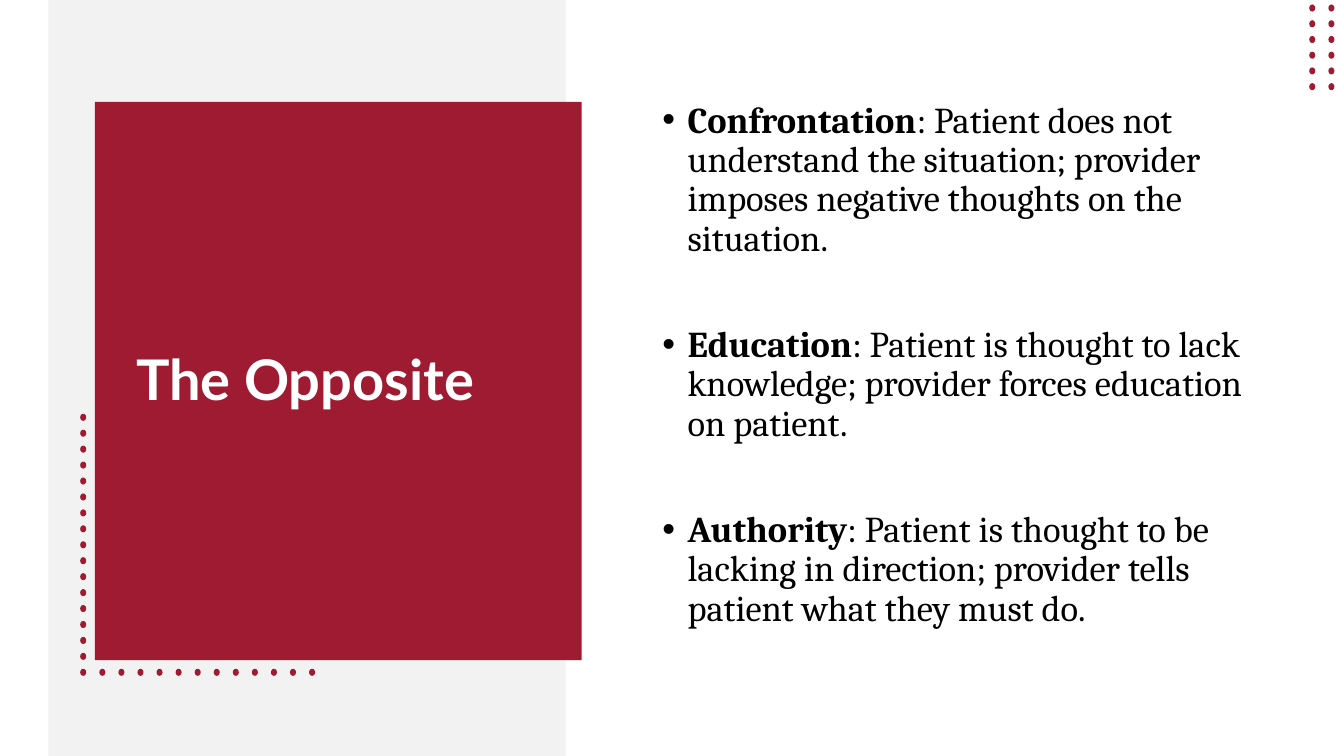
from dataclasses import dataclass

from pptx import Presentation
from pptx.dml.color import RGBColor
from pptx.enum.shapes import MSO_SHAPE
from pptx.enum.text import MSO_ANCHOR, MSO_AUTO_SIZE, PP_ALIGN
from pptx.util import Inches, Pt

RECT, OVAL = MSO_SHAPE.RECTANGLE, MSO_SHAPE.OVAL
TOP, MIDDLE = MSO_ANCHOR.TOP, MSO_ANCHOR.MIDDLE
LEFT = PP_ALIGN.LEFT
NO_FIT = MSO_AUTO_SIZE.NONE

COLORS = {"crimson": "9E1B32", "band": "F2F2F2", "white": "FFFFFF", "black": "000000"}
DOT_W, DOT_H = 0.07, 0.06


@dataclass
class Panel:
    x: float
    y: float
    w: float
    h: float
    color: str


@dataclass
class DotGrid:
    x: float
    y: float
    cols: int = 1
    rows: int = 1
    dx: float = 0
    dy: float = 0


@dataclass
class Point:
    term: str
    meaning: str


PANELS = [Panel(0.48, 0, 5.13, 7.5, "band"), Panel(0.94, 1.01, 4.83, 5.54, "crimson")]
FRAME_DOTS = [
    DotGrid(0.79, 4.11, rows=17, dy=2.53 / 16),
    DotGrid(0.98, 6.64, cols=12, dx=2.08 / 11),
]
CORNER_DOTS = [DotGrid(12.98, 0.05, cols=2, rows=6, dx=0.19, dy=0.156)]
POINTS = [
    Point("Confrontation", ": Patient does not understand the situation; "
          "provider imposes negative thoughts on the situation."),
    Point("Education", ": Patient is thought to lack knowledge; "
          "provider forces education on patient."),
    Point("Authority", ": Patient is thought to be lacking in direction; "
          "provider tells patient what they must do."),
]


def add_filled(shapes, kind, x: float, y: float, w: float, h: float, color: str):
    s = shapes.add_shape(kind, Inches(x), Inches(y), Inches(w), Inches(h))
    s.shadow.inherit = False
    s.fill.solid()
    s.fill.fore_color.rgb = RGBColor.from_string(COLORS[color])
    s.line.fill.background()
    return s


def add_dots(slide, grids: list[DotGrid]) -> None:
    group = slide.shapes.add_group_shape()
    for g in grids:
        for row in range(g.rows):
            for col in range(g.cols):
                dot = add_filled(group.shapes, OVAL, g.x + col * g.dx, g.y + row * g.dy,
                                 DOT_W, DOT_H, "crimson")
                dot.rotation = 90


def add_run(p, text: str, *, font: str, size: float, color: str, bold: bool = False) -> None:
    r = p.add_run()
    r.text = text
    r.font.name = font
    r.font.size = Pt(size)
    r.font.bold = bold
    r.font.color.rgb = RGBColor.from_string(COLORS[color])


def place(slide, s, x: float, y: float, w: float, h: float, anchor):
    """Move a placeholder above the panels and return its text frame."""
    s.left, s.top, s.width, s.height = Inches(x), Inches(y), Inches(w), Inches(h)
    slide.shapes.element.append(s.element)
    tf = s.text_frame
    tf.word_wrap = True
    tf.auto_size = NO_FIT
    tf.vertical_anchor = anchor
    return tf


def fill_title(slide) -> None:
    tf = place(slide, slide.shapes.title, 1.25, 1.45, 4.14, 4.68, MIDDLE)
    p = tf.paragraphs[0]
    p.alignment = LEFT
    p.line_spacing = 0.9
    add_run(p, "The Opposite", font="Lato", size=40, color="white", bold=True)


def fill_body(slide) -> None:
    tf = place(slide, slide.placeholders[1], 6.47, 1.01, 6.14, 6.1, TOP)
    tf.margin_top = 0
    for i, point in enumerate(POINTS):
        p = tf.add_paragraph() if i else tf.paragraphs[0]
        p.line_spacing = 0.9
        p.space_before = Pt(48 if i else 0)
        pPr = p._p.get_or_add_pPr()
        pPr.set("marL", str(Inches(0.25)))
        pPr.set("indent", str(Inches(-0.25)))
        add_run(p, point.term, font="Cambria", size=26, color="black", bold=True)
        add_run(p, point.meaning, font="Cambria", size=26, color="black")


def main() -> None:
    prs = Presentation()
    prs.slide_width, prs.slide_height = Inches(13.33), Inches(7.5)
    slide = prs.slides.add_slide(prs.slide_layouts[1])
    for panel in PANELS:
        add_filled(slide.shapes, RECT, panel.x, panel.y, panel.w, panel.h, panel.color)
    add_dots(slide, FRAME_DOTS)
    fill_title(slide)
    add_dots(slide, CORNER_DOTS)
    fill_body(slide)
    prs.save("out.pptx")


if __name__ == "__main__":
    main()
